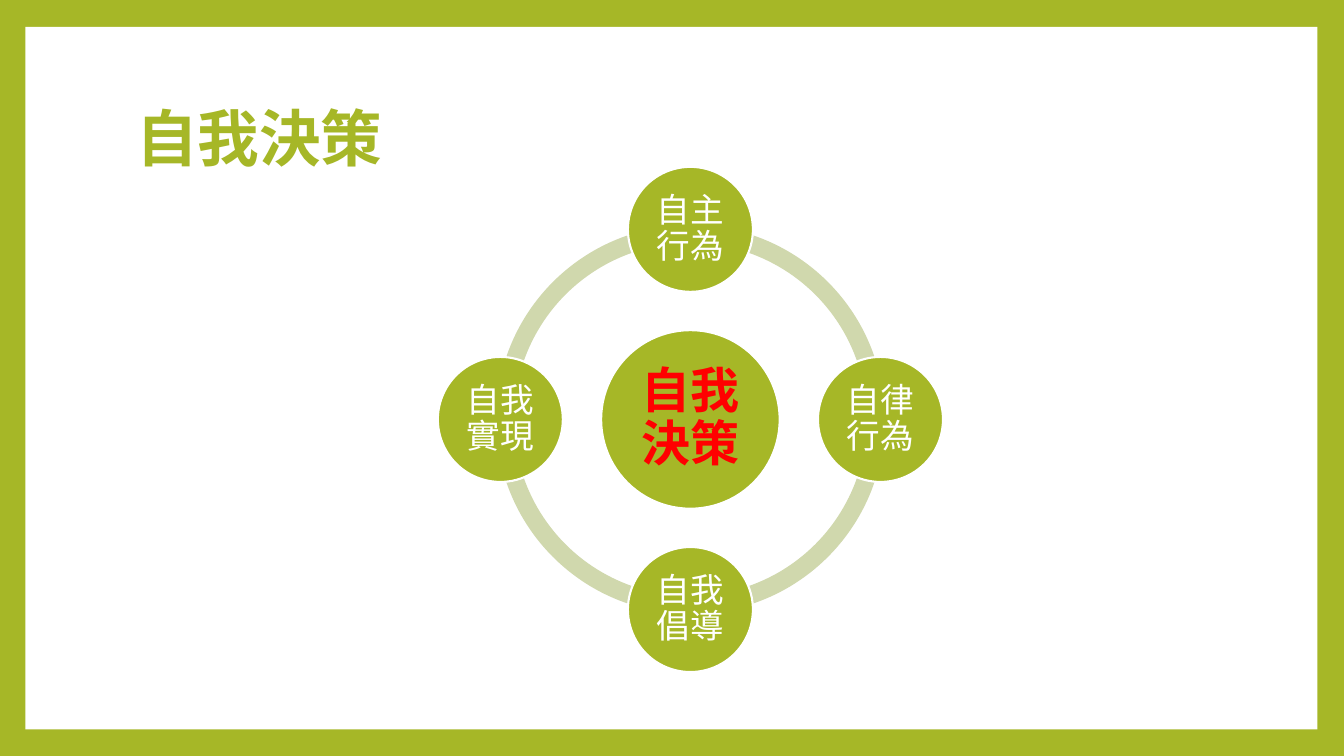
from math import cos, radians, sin

from lxml import etree
from pptx import Presentation
from pptx.dml.color import RGBColor
from pptx.enum import shapes, text
from pptx.oxml import ns
from pptx.util import Cm, Pt

GREEN = RGBColor(0xA6, 0xB7, 0x27)
PALE_GREEN = RGBColor(0xD0, 0xD8, 0xAD)
WHITE = RGBColor(0xFF, 0xFF, 0xFF)
RED = RGBColor(0xFF, 0x00, 0x00)
FONT = "Noto Sans CJK SC"

CENTER_X, CENTER_Y = 17.4, 10.57
ORBIT_RADIUS = 4.79
RING_SIZE, HUB_SIZE, NODE_SIZE = 9.8, 4.5, 3.15
NODES = ["自主行為", "自律行為", "自我倡導", "自我實現"]


def write_text(shape, content, size, color, bold=False, align=text.PP_ALIGN.CENTER, inset=0.08):
    """Fill a shape with one vertically centred, formatted paragraph."""
    frame = shape.text_frame
    frame.word_wrap = True
    frame.vertical_anchor = text.MSO_ANCHOR.MIDDLE
    frame.margin_left = frame.margin_right = Cm(inset)
    frame.margin_top = frame.margin_bottom = Cm(inset)
    para = frame.paragraphs[0]
    para.alignment = align
    para.line_spacing = 0.9
    span = para.add_run()
    span.text = content
    span.font.size = Pt(size)
    span.font.bold = bold
    span.font.color.rgb = color
    span.font.name = FONT
    properties = span.font._element
    etree.SubElement(properties, ns.qn("a:ea"), typeface=FONT)


def add_filled(page, kind, left, top, width, height, fill, outline=None):
    """Add a flat preset shape, with a thin outline if a colour is given."""
    shape = page.shapes.add_shape(kind, Cm(left), Cm(top), Cm(width), Cm(height))
    shape.shadow.inherit = False
    shape.fill.solid()
    shape.fill.fore_color.rgb = fill
    if outline is None:
        shape.line.fill.background()
    else:
        shape.line.color.rgb = outline
        shape.line.width = Pt(1.5)
    return shape


def add_centered(page, kind, x, y, size, fill, outline=None):
    """Add a square-framed shape around a centre point."""
    return add_filled(page, kind, x - size / 2, y - size / 2, size, size, fill, outline)


def add_ring_quarter(page, start):
    """Add the quarter of the ring that begins at an angle in degrees."""
    arc = add_centered(page, shapes.MSO_SHAPE.BLOCK_ARC, CENTER_X, CENTER_Y, RING_SIZE, PALE_GREEN)
    arc.adjustments[0] = start * 0.6
    arc.adjustments[1] = (start + 90) % 360 * 0.6
    arc.adjustments[2] = 0.046


def add_circle(page, x, y, diameter, content, size, color, **style):
    """Add a labelled green circle around a centre point."""
    circle = add_centered(page, shapes.MSO_SHAPE.OVAL, x, y, diameter, GREEN, WHITE)
    write_text(circle, content, size, color, **style)


def add_title(page, content):
    """Add the slide heading."""
    box = page.shapes.add_textbox(Cm(3.18), Cm(1.7), Cm(27.43), Cm(3.76))
    write_text(box, content, 44, GREEN, bold=True, align=text.PP_ALIGN.LEFT, inset=0.25)


def main():
    """Build the self-determination slide."""
    deck = Presentation()
    deck.slide_width, deck.slide_height = Cm(33.87), Cm(19.05)
    page = deck.slides.add_slide(deck.slide_layouts[6])
    page.background.fill.solid()
    page.background.fill.fore_color.rgb = GREEN
    add_filled(page, shapes.MSO_SHAPE.RECTANGLE, 0.64, 0.68, 32.56, 17.7, WHITE)
    add_title(page, "自我決策")
    for start in range(0, 360, 90):
        add_ring_quarter(page, start)
    add_circle(page, CENTER_X, CENTER_Y, HUB_SIZE, "自我決策", 35, RED, bold=True, inset=0.13)
    for index, label in enumerate(NODES):
        angle = radians(index * 90 - 90)
        x = CENTER_X + ORBIT_RADIUS * cos(angle)
        y = CENTER_Y + ORBIT_RADIUS * sin(angle)
        add_circle(page, x, y, NODE_SIZE, label, 24, WHITE)
    deck.save("out.pptx")


if __name__ == "__main__":
    main()
